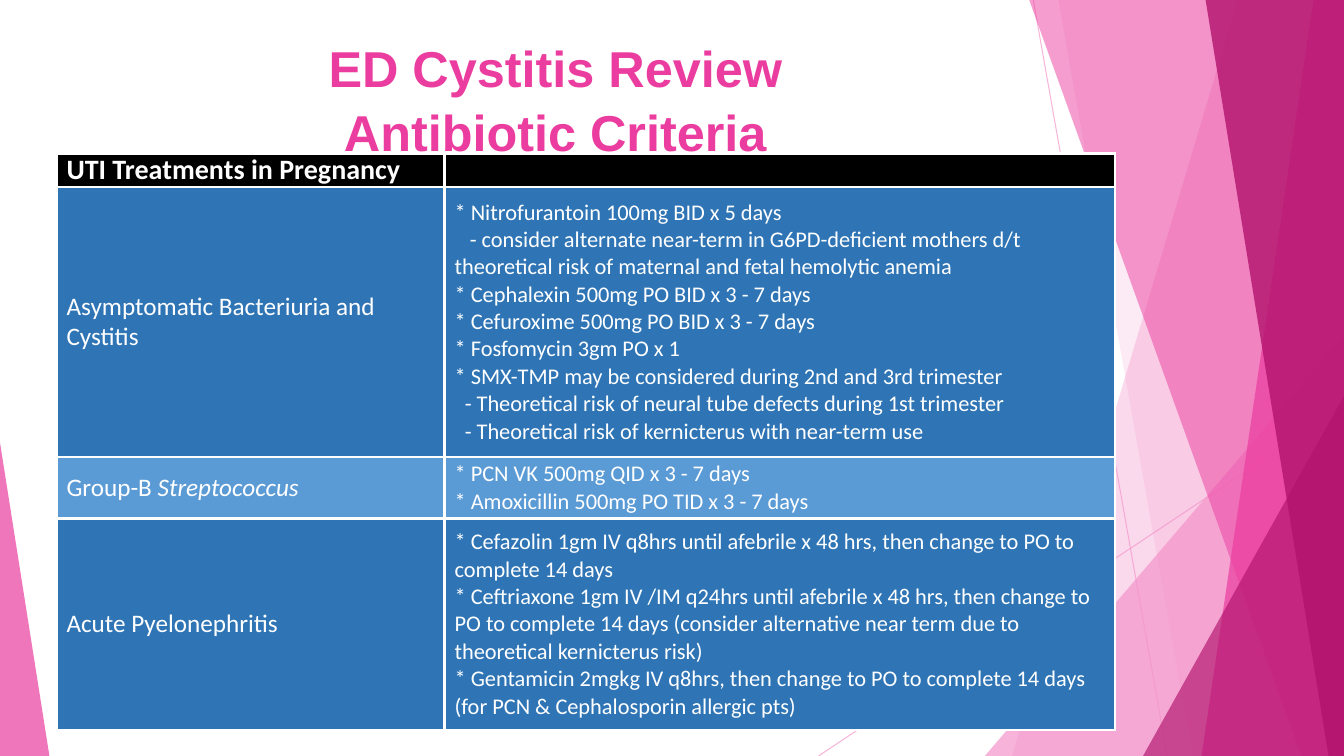
from lxml.etree import SubElement as Sub
from pptx import Presentation
from pptx.dml.color import RGBColor as Rgb
from pptx.enum.shapes import MSO_CONNECTOR as Link, MSO_SHAPE as Kind
from pptx.enum.text import MSO_ANCHOR as Anchor, PP_ALIGN as Align
from pptx.oxml.ns import qn
from pptx.util import Inches, Pt

# Content
HUES = {"rose": "F496CB", "pink": "EB3D9F", "plum": "B2136D", "white": "FFFFFF",
        "black": "000000", "blue": "2F75B5", "sky": "5B9BD5"}
TITLE = ["ED Cystitis Review", "Antibiotic Criteria"]

# Each row: height, fill, left runs (text, format), right lines (indent, text)
ROWS = [
    (4.13, "black", [("UTI Treatments in Pregnancy", {"size": Pt(20), "bold": True})], []),
    (35.73, "blue", [("Asymptomatic Bacteriuria and Cystitis", {})], [
        (0, "* Nitrofurantoin 100mg BID x 5 days"),
        (0.15, "- consider alternate near-term in G6PD-deficient mothers d/t "
               "theoretical risk of maternal and fetal hemolytic anemia"),
        (0, "* Cephalexin 500mg PO BID x 3 - 7 days"),
        (0, "* Cefuroxime 500mg PO BID x 3 - 7 days"),
        (0, "* Fosfomycin 3gm PO x 1"),
        (0, "* SMX-TMP may be considered during 2nd and 3rd trimester"),
        (0.1, "- Theoretical risk of neural tube defects during 1st trimester"),
        (0.1, "- Theoretical risk of kernicterus with near-term use")]),
    (8.13, "sky", [("Group-B ", {}), ("Streptococcus", {"italic": True})], [
        (0, "* PCN VK 500mg QID x 3 - 7 days"),
        (0, "* Amoxicillin 500mg PO TID x 3 - 7 days")]),
    (28, "blue", [("Acute Pyelonephritis", {})], [
        (0, "* Cefazolin 1gm IV q8hrs until afebrile x 48 hrs, then change to PO "
            "to complete 14 days"),
        (0, "* Ceftriaxone 1gm IV /IM q24hrs until afebrile x 48 hrs, then change to PO "
            "to complete 14 days (consider alternative near term due to "
            "theoretical kernicterus risk)"),
        (0, "* Gentamicin 2mgkg IV q8hrs, then change to PO to complete 14 days "
            "(for PCN & Cephalosporin allergic pts)")]),
]

# Places, in percent of the slide's width and height
COLS = [28.88, 49.88]
GRID = (4.2, 20.27)
HEAD = (6.08, 3.87, 70.5, 19.2)
LINES = [(76.88, 0, 86.85, 100), (100, 53.73, 60.9, 100)]

# Bands reach the right edge: (top x, foot x, hue, opacity)
# Wedges stand on the foot: (left, top, width, apex, hue, opacity)
DECOR = [
    (92.1, 75.3, "rose", 36),
    (78.75, 88.73, "rose", 20),
    (73.28, 44.4, 26.72, 1, "rose", 72),
    (76.58, 96.83, "pink", 50),
    (97.73, 89.4, "pink", 70),
    (89.7, 98.85, "plum", 80),
    (85.05, 52.4, 14.95, 1, "plum", 66),
    (0, 58.53, 3.68, 0, "pink", 70),
]

deck = Presentation()
deck.slide_width, deck.slide_height = Inches(13.33), Inches(7.5)
slide = deck.slides.add_slide(deck.slide_layouts[6])
shapes = slide.shapes


def wide(share):
    return int(deck.slide_width * share / 100)


def high(share):
    return int(deck.slide_height * share / 100)


def paint(fill, hue, alpha=100):
    fill.solid()
    fill.fore_color.rgb = Rgb.from_string(HUES[hue])
    if alpha < 100:
        tone = fill._xPr.find(qn("a:solidFill"))[0]
        Sub(tone, qn("a:alpha"), val=str(alpha * 1000))


def write(para, text, hue, **form):
    run = para.add_run()
    run.text = text
    run.font.color.rgb = Rgb.from_string(HUES[hue])
    for name, value in form.items():
        setattr(run.font, name, value)


# Thin lines behind the bands
for x1, y1, x2, y2 in LINES:
    line = shapes.add_connector(Link.STRAIGHT, wide(x1), high(y1), wide(x2), high(y2))
    line.line.width = Pt(0.75)
    paint(line.line.fill, "rose", 70)
    Sub(line._element.spPr, qn("a:effectLst"))

# Bands and wedges
for *place, hue, alpha in DECOR:
    if len(place) == 2:
        top, foot = map(wide, place)
        edge, base = deck.slide_width, deck.slide_height
        path = shapes.build_freeform(top, 0)
        path.add_line_segments([(edge, 0), (edge, base), (foot, base)], close=True)
        part = path.convert_to_shape()
    else:
        left, top, width, apex = place
        part = shapes.add_shape(Kind.ISOSCELES_TRIANGLE, wide(left), high(top),
                                wide(width), high(100 - top))
        part.adjustments[0] = apex
    part.shadow.inherit = False
    part.line.fill.background()
    paint(part.fill, hue, alpha)

# Title
left, top, width, height = HEAD
frame = shapes.add_textbox(wide(left), high(top), wide(width), high(height)).text_frame
frame.word_wrap = True
frame.vertical_anchor = Anchor.TOP
for i, text in enumerate(TITLE):
    para = frame.add_paragraph() if i else frame.paragraphs[0]
    para.alignment = Align.CENTER
    para.line_spacing = 1.05
    write(para, text, "pink", name="Arial", size=Pt(36), bold=True)

# Treatment table
table = shapes.add_table(len(ROWS), len(COLS), wide(GRID[0]), high(GRID[1]),
                         wide(sum(COLS)), high(sum(row[0] for row in ROWS))).table
for col, share in zip(table.columns, COLS):
    col.width = wide(share)

CELL = {"margin_left": Inches(0.1), "margin_right": 0, "margin_top": 0,
        "margin_bottom": 0, "vertical_anchor": Anchor.MIDDLE}
BASE = {"name": "Calibri", "size": Pt(18), "bold": False}
for r, (share, hue, label, lines) in enumerate(ROWS):
    table.rows[r].height = high(share)
    for c in range(len(COLS)):
        cell = table.cell(r, c)
        for name, value in CELL.items():
            setattr(cell, name, value)
        props = cell._tc.get_or_add_tcPr()
        for side in ("lnL", "lnR", "lnT", "lnB"):
            rule = Sub(props, qn("a:" + side), w=str(Pt(2.25)))
            Sub(Sub(rule, qn("a:solidFill")), qn("a:srgbClr"), val=HUES["white"])
        paint(cell.fill, hue)
    para = table.cell(r, 0).text_frame.paragraphs[0]
    for text, form in label:
        write(para, text, "white", **{**BASE, **form})
    frame = table.cell(r, 1).text_frame
    frame.paragraphs[0].font.size = Pt(16)
    for i, (indent, text) in enumerate(lines):
        para = frame.add_paragraph() if i else frame.paragraphs[0]
        if indent:
            para._p.get_or_add_pPr().set("indent", str(Inches(indent)))
        write(para, text, "white", **{**BASE, "size": Pt(16)})

deck.save("out.pptx")
